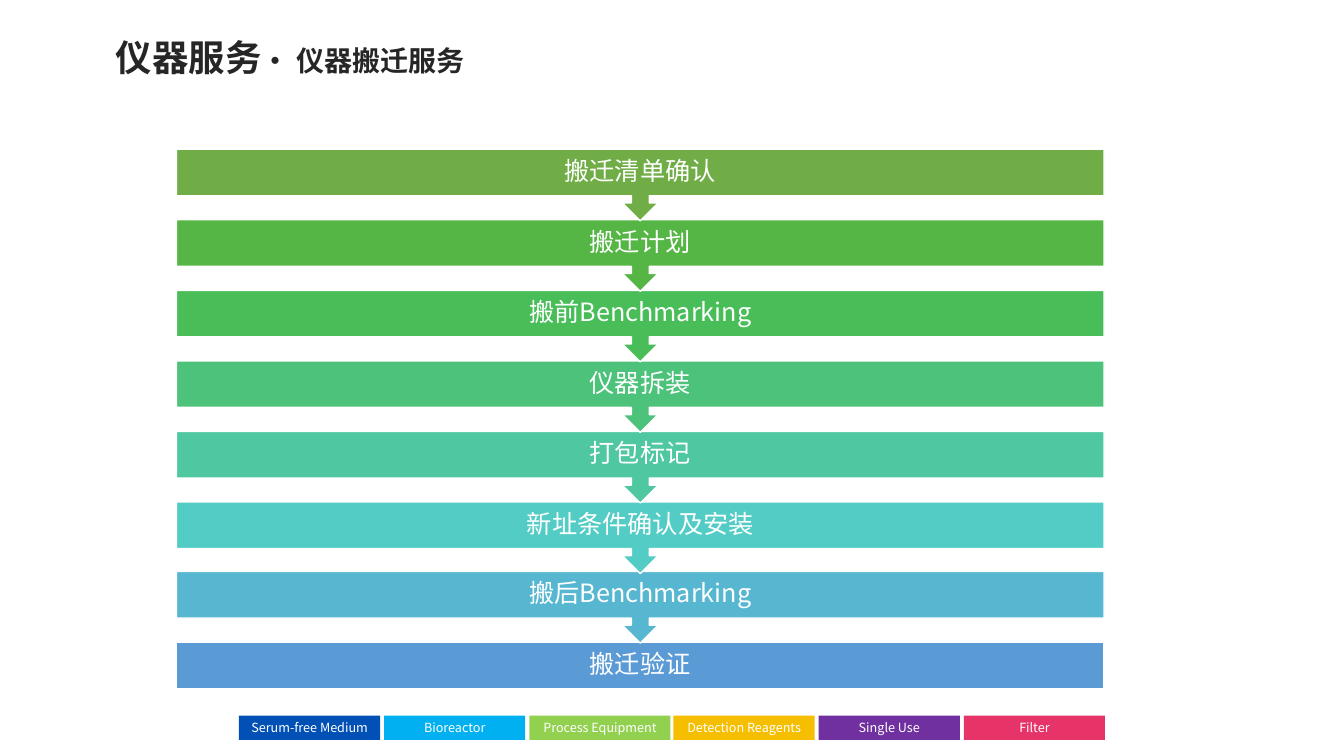
from pptx import Presentation
from pptx.dml.color import RGBColor
from pptx.enum.shapes import MSO_SHAPE
from pptx.enum.text import MSO_ANCHOR, MSO_AUTO_SIZE, PP_ALIGN
from pptx.oxml.ns import qn
from pptx.util import Pt
from lxml.etree import SubElement

PX = 9144  # 100 px to the inch
FONT = "Noto Sans CJK SC"
WHITE = RGBColor(0xFF, 0xFF, 0xFF)
INK = RGBColor(0x26, 0x26, 0x26)
NAVY = RGBColor(0x00, 0x50, 0xB5)
SKY = RGBColor(0x00, 0xB0, 0xF0)
LIME = RGBColor(0x92, 0xD0, 0x50)
AMBER = RGBColor(0xF6, 0xBE, 0x00)
PURPLE = RGBColor(0x70, 0x30, 0xA0)
ROSE = RGBColor(0xE7, 0x34, 0x68)
OLIVE = RGBColor(0x70, 0xAD, 0x47)
GRASS = RGBColor(0x55, 0xB6, 0x46)
GREEN = RGBColor(0x48, 0xBD, 0x58)
JADE = RGBColor(0x4C, 0xC2, 0x7B)
MINT = RGBColor(0x4F, 0xC7, 0xA0)
TEAL = RGBColor(0x53, 0xCC, 0xC5)
AQUA = RGBColor(0x57, 0xB7, 0xD1)
BLUE = RGBColor(0x5B, 0x9B, 0xD5)

CATEGORIES = [
    ("Serum-free Medium", NAVY), ("Bioreactor", SKY), ("Process Equipment", LIME),
    ("Detection Reagents", AMBER), ("Single Use", PURPLE), ("Filter", ROSE),
]
STEPS = [
    ("搬迁清单确认", OLIVE), ("搬迁计划", GRASS), ("搬前Benchmarking", GREEN),
    ("仪器拆装", JADE), ("打包标记", MINT), ("新址条件确认及安装", TEAL),
    ("搬后Benchmarking", AQUA), ("搬迁验证", BLUE),
]


class SlideBuilder:
    def __init__(self, page):
        self.page = page

    def place(self, *lengths):
        return [length * PX for length in lengths]

    def style(self, span, size, color, bold=False):
        span.font.name = FONT
        span.font.size = Pt(size)
        span.font.bold = bold
        span.font.color.rgb = color
        SubElement(span.font._element, qn("a:ea")).set("typeface", FONT)

    def title(self, parts, left, top, width, height):
        box = self.page.shapes.title
        box.left, box.top, box.width, box.height = self.place(left, top, width, height)
        frame = box.text_frame
        frame.auto_size = MSO_AUTO_SIZE.NONE
        frame.vertical_anchor = MSO_ANCHOR.MIDDLE
        para = frame.paragraphs[0]
        para.alignment = PP_ALIGN.LEFT
        for text, size in parts:
            span = para.add_run()
            span.text = text
            self.style(span, size, INK, bold=True)

    def block(self, preset, color, left, top, width, height, outlined=False):
        shape = self.page.shapes.add_shape(preset, *self.place(left, top, width, height))
        shape.shadow.inherit = False
        shape.fill.solid()
        shape.fill.fore_color.rgb = color
        if outlined:
            shape.line.color.rgb = WHITE
            shape.line.width = Pt(1)
        else:
            shape.line.fill.background()
        return shape

    def label(self, text, size, left, top, width, height, anchor=MSO_ANCHOR.TOP):
        box = self.page.shapes.add_textbox(*self.place(left, top, width, height))
        frame = box.text_frame
        frame.word_wrap = True
        frame.vertical_anchor = anchor
        frame.text = text
        para = frame.paragraphs[0]
        para.alignment = PP_ALIGN.CENTER
        self.style(para.runs[0], size, WHITE)
        return box

    def step(self, text, color, top, last):
        preset = MSO_SHAPE.RECTANGLE if last else MSO_SHAPE.UP_ARROW_CALLOUT
        height = 46 if last else 71
        shape = self.block(preset, color, 175, top, 920, height, outlined=True)
        if not last:
            shape.rotation = 180
        box = self.label(text, 18, 175, top, 920, 46, MSO_ANCHOR.MIDDLE)
        frame = box.text_frame
        frame.margin_left = frame.margin_right = 14 * PX
        frame.margin_top = frame.margin_bottom = 14 * PX
        frame.paragraphs[0].line_spacing = 0.9


def main():
    deck = Presentation()
    deck.slide_width, deck.slide_height = 1333 * PX, 750 * PX
    builder = SlideBuilder(deck.slides.add_slide(deck.slide_layouts[5]))

    # Category strip along the bottom
    for index, (text, color) in enumerate(CATEGORIES):
        left = 237 + round(143.8 * index)
        builder.block(MSO_SHAPE.RECTANGLE, color, left, 710, 140, 24)
        builder.label(text, 9, left - 4, 709, 148, 31)

    # Heading
    builder.title([("仪器服务", 26), ("· 仪器搬迁服务", 20)], 105, 29, 492, 54)

    # Relocation steps, stacked from the last one up
    for index, (text, color) in reversed(list(enumerate(STEPS))):
        builder.step(text, color, 148 + round(69.9 * index), index == len(STEPS) - 1)

    deck.save("out.pptx")


if __name__ == "__main__":
    main()
